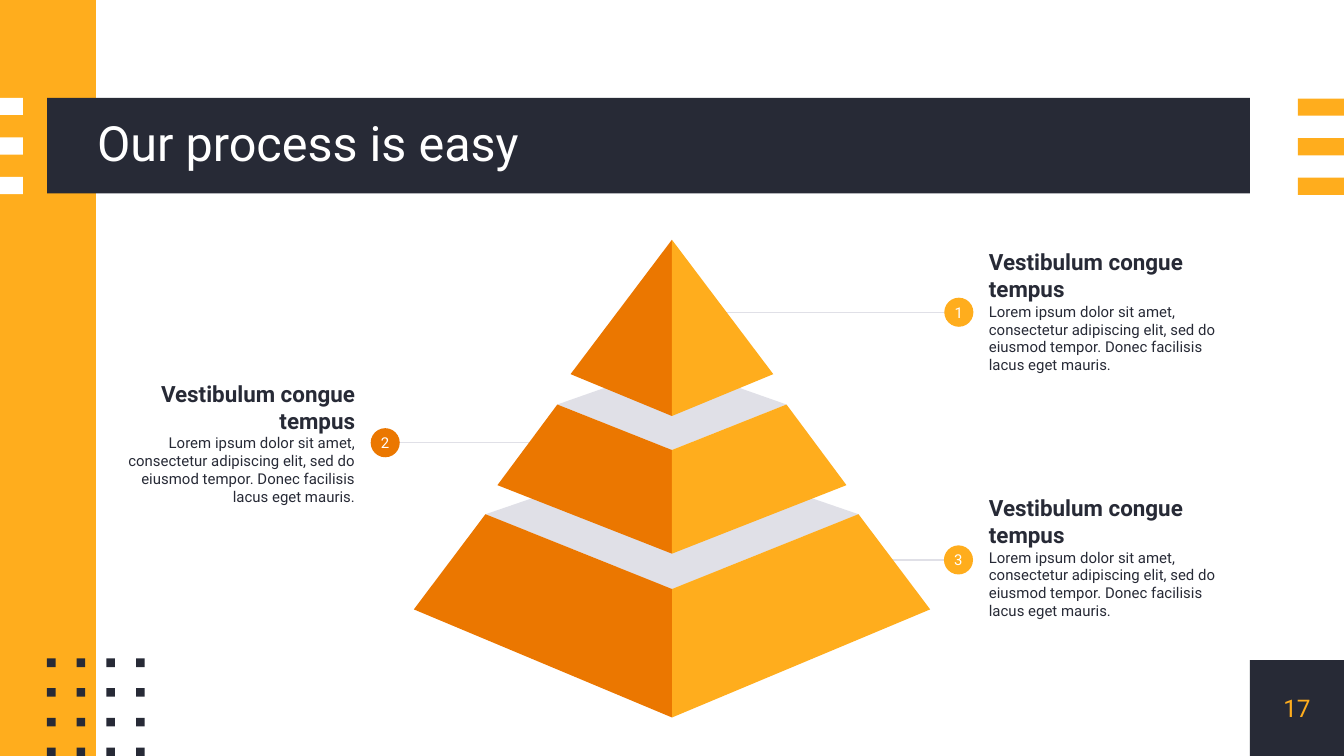
from pptx import Presentation
from pptx.dml.color import RGBColor
from pptx.enum.shapes import MSO_CONNECTOR, MSO_SHAPE
from pptx.enum.text import MSO_ANCHOR, PP_ALIGN
from pptx.oxml.ns import qn
from pptx.util import Pt
from lxml import etree

RECT, OVAL = MSO_SHAPE.RECTANGLE, MSO_SHAPE.OVAL
STRAIGHT = MSO_CONNECTOR.STRAIGHT
MIDDLE = MSO_ANCHOR.MIDDLE
LEFT, CENTER, RIGHT = PP_ALIGN.LEFT, PP_ALIGN.CENTER, PP_ALIGN.RIGHT

FONT = "Roboto"
DARK, AMBER, ORANGE = "272A36", "FFAD1D", "EB7700"
PALE, WHITE = "E0E0E7", "FFFFFF"

HEADING = "Vestibulum congue tempus"
BODY = ("Lorem ipsum dolor sit amet, consectetur adipiscing elit, sed do "
        "eiusmod tempor. Donec facilisis lacus eget mauris.")

AXIS = 360
BAR_TOP, BAR_HEIGHT, BAR_RIGHT = 52.4, 51.3, 669.6
BADGE = 15.6
CALLOUT_WIDTH, CALLOUT_HEIGHT = 147, 108.7

# number, side, colour, pyramid edge x, badge centre x and y, text left, text centre y
CALLOUTS = [
    ("1", LEFT, AMBER, 387, 513.7, 167.3, 522.7, 166.7),
    ("2", RIGHT, ORANGE, 286, 206.4, 237.2, 50.4, 237.2),
    ("3", LEFT, AMBER, 475, 513.5, 300, 522.7, 298.4),
]

# back y, then half width, side y and front y of the top and of the base
TIERS = [
    (241.2, (99.9, 275.5, 315.6), (138.3, 326.5, 384.4)),
    (195.1, (61.4, 216.7, 241.1), (93.5, 259.9, 296.6)),
    (128.5, (0, 128.5, 128.5), (54.3, 200.5, 222.9)),
]


def rgb(value):
    return RGBColor.from_string(value)


def paint(sp, color):
    sp.shadow.inherit = False
    sp.fill.solid()
    sp.fill.fore_color.rgb = rgb(color)
    sp.line.fill.background()
    return sp


def add_preset(s, kind, x, y, w, h, color):
    return paint(s.shapes.add_shape(kind, Pt(x), Pt(y), Pt(w), Pt(h)), color)


def add_face(s, points, color):
    start, *rest = [(Pt(x), Pt(y)) for x, y in points]
    builder = s.shapes.build_freeform(*start)
    builder.add_line_segments(rest, close=True)
    return paint(builder.convert_to_shape(), color)


def add_line(s, x1, x2, y):
    line = s.shapes.add_connector(STRAIGHT, Pt(x1), Pt(y), Pt(x2), Pt(y))
    line.line.color.rgb = rgb(PALE)
    line.line.width = Pt(0.75)
    etree.SubElement(line.element.spPr, qn("a:effectLst"))


def set_frame(tf, inset=0):
    tf.word_wrap = True
    tf.vertical_anchor = MIDDLE
    tf.margin_left = tf.margin_right = Pt(inset)
    tf.margin_top = tf.margin_bottom = Pt(inset)


def write(p, text, size, color, align=LEFT, bold=False, after=0, spacing=None):
    p.alignment = align
    p.space_after = Pt(after)
    p.line_spacing = spacing
    r = p.add_run()
    r.text = text
    r.font.name = FONT
    r.font.size = Pt(size)
    r.font.bold = bold
    r.font.color.rgb = rgb(color)


def add_label(sp, text, size, color):
    set_frame(sp.text_frame)
    write(sp.text_frame.paragraphs[0], text, size, color, align=CENTER)


def add_stripes(s, x, y, w, color):
    for i in range(3):
        add_preset(s, RECT, x, y + 21.2 * i, w, 9.2, color)


def add_background(s):
    corner = add_preset(s, RECT, BAR_RIGHT, 353.6, 50.4, 51.4, DARK)
    add_label(corner, "17", 13, AMBER)
    add_preset(s, RECT, 0, 0, 51.4, 405, AMBER)
    add_preset(s, RECT, 25.2, BAR_TOP, BAR_RIGHT - 25.2, BAR_HEIGHT, DARK)
    add_stripes(s, 0, BAR_TOP, 12.3, WHITE)
    add_stripes(s, 695.3, 52.8, 24.7, AMBER)
    for row in range(4):
        for col in range(4):
            add_preset(s, RECT, 25.2 + 15.9 * col, 352.8 + 15.9 * row,
                       4.6, 4.6, DARK)


def add_title(s, text):
    sp = s.shapes.title
    sp.left, sp.top = Pt(52), Pt(BAR_TOP)
    sp.width, sp.height = Pt(BAR_RIGHT - 52), Pt(BAR_HEIGHT)
    set_frame(sp.text_frame)
    write(sp.text_frame.paragraphs[0], text, 26, WHITE, spacing=0.9)
    sp.element.getparent().append(sp.element)


def add_callout(s, number, align, color, edge, x, y, text_left, text_mid):
    add_line(s, edge, x, y)
    badge = add_preset(s, OVAL, x - BADGE / 2, y - BADGE / 2, BADGE, BADGE, color)
    add_label(badge, number, 8, WHITE)
    box = s.shapes.add_textbox(Pt(text_left), Pt(text_mid - CALLOUT_HEIGHT / 2),
                               Pt(CALLOUT_WIDTH), Pt(CALLOUT_HEIGHT))
    tf = box.text_frame
    set_frame(tf, inset=7.2)
    write(tf.paragraphs[0], HEADING, 12, DARK, align=align, bold=True)
    write(tf.add_paragraph(), BODY, 8, DARK, align=align, after=16)


def add_tier(s, back, top, base):
    top_half, top_side, top_front = top
    base_half, base_side, base_front = base
    if top_half:
        add_face(s, [(AXIS - top_half, top_side), (AXIS, top_front),
                     (AXIS + top_half, top_side), (AXIS, back)], PALE)
    for sign, color in ((-1, ORANGE), (1, AMBER)):
        add_face(s, [(AXIS + sign * top_half, top_side),
                     (AXIS + sign * base_half, base_side),
                     (AXIS, base_front), (AXIS, top_front)], color)


def main():
    prs = Presentation()
    prs.slide_width, prs.slide_height = Pt(720), Pt(405)
    s = prs.slides.add_slide(prs.slide_layouts[5])
    add_background(s)
    add_title(s, "Our process is easy")
    for callout in CALLOUTS:
        add_callout(s, *callout)
    for tier in TIERS:
        add_tier(s, *tier)
    prs.save("out.pptx")


if __name__ == "__main__":
    main()
